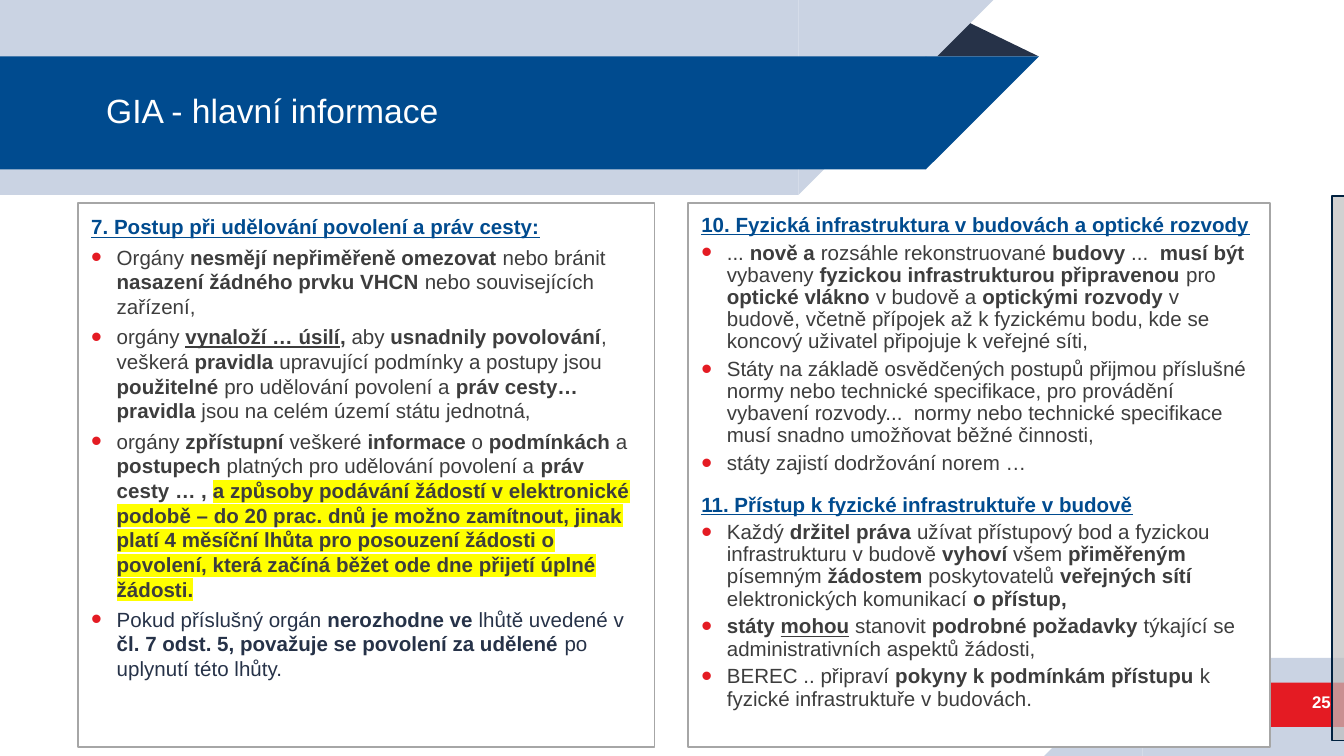
import pptx
import pptx.dml.color
import pptx.enum.shapes
import pptx.enum.text
import pptx.oxml.ns
import pptx.util
import lxml.etree

WIDE = 10
HIGH = WIDE * 9 / 16
COLS = 100
CELL = WIDE / COLS  # square grid: lengths below are columns and rows
ROWS = HIGH / CELL
FACE = "Arial"
HEX = {
    "blue": "004B8F", "pale": "CAD3E3", "navy": "263248", "red": "E41B23",
    "dark": "C00000", "white": "FFFFFF", "text": "3D3D3D", "edge": "A6A6A6",
    "mark": "FFFF00", "gray": "BFBFBF", "ink": "00213F",
}
KIND = pptx.enum.shapes.MSO_SHAPE
ALIGN = pptx.enum.text.PP_ALIGN
ANCHOR = pptx.enum.text.MSO_ANCHOR
Pt = pptx.util.Pt

# In the body text * toggles bold, _ underline and ~ highlight.
LEFT = [
    ("head", "7. Postup při udělování povolení a práv cesty:"),
    ("item", "Orgány *nesmějí nepřiměřeně omezovat *nebo bránit *nasazení žádného "
             "prvku VHCN *nebo souvisejících zařízení,"),
    ("item", "orgány *_vynaloží … úsilí_, *aby *usnadnily povolování*, veškerá "
             "*pravidla* upravující podmínky a postupy jsou *použitelné* pro "
             "udělování povolení a *práv cesty… pravidla *jsou na celém území "
             "státu jednotná,"),
    ("item", "orgány *zpřístupní* veškeré *informace* o *podmínkách* a *postupech* "
             "platných pro udělování povolení a *práv cesty … , ~a způsoby podávání "
             "žádostí v elektronické podobě – do 20 prac. dnů je možno zamítnout, "
             "jinak platí 4 měsíční lhůta pro posouzení žádosti o povolení, která "
             "začíná běžet ode dne přijetí úplné žádosti."),
    ("note", "Pokud příslušný orgán *nerozhodne ve *lhůtě uvedené v *čl. 7 odst. 5, "
             "považuje se povolení za udělené *po uplynutí této lhůty."),
]
RIGHT = [
    ("head", "10. Fyzická infrastruktura v budovách a optické rozvody"),
    ("item", "... *nově a* rozsáhle rekonstruované *budovy* ...  *musí být *vybaveny "
             "*fyzickou infrastrukturou připravenou *pro *optické vlákno *v budově a "
             "*optickými rozvody* v budově, včetně přípojek až k fyzickému bodu, kde "
             "se koncový uživatel připojuje k veřejné síti,"),
    ("item", "Státy na základě osvědčených postupů přijmou příslušné normy nebo "
             "technické specifikace, pro provádění vybavení rozvody...  normy nebo "
             "technické specifikace musí snadno umožňovat běžné činnosti,"),
    ("item", "státy zajistí dodržování norem …"),
    ("head", "11. Přístup k fyzické infrastruktuře v budově"),
    ("item", "Každý *držitel práva *užívat přístupový bod a fyzickou infrastrukturu "
             "v budově *vyhoví* všem *přiměřeným* písemným *žádostem* poskytovatelů "
             "*veřejných sítí* elektronických komunikací *o přístup,"),
    ("item", "*státy _mohou_ *stanovit *podrobné požadavky *týkající se "
             "administrativních aspektů žádosti,"),
    ("item", "BEREC .. připraví *pokyny k podmínkám přístupu *k fyzické "
             "infrastruktuře v budovách."),
]
TONE = {"head": "blue", "item": "text", "note": "navy"}


def put(item, **values):
    for name, value in values.items():
        setattr(item, name, value)


def grid(*cells):
    return [pptx.util.Inches(cell * CELL) for cell in cells]


def rgb(name):
    return pptx.dml.color.RGBColor.from_string(HEX[name])


def sub(parent, tag, **values):
    return lxml.etree.SubElement(parent, pptx.oxml.ns.qn(tag), values)


def style(font, tone, size, **values):
    put(font, name=FACE, size=Pt(size), **values)
    font.color.rgb = rgb(tone)


def shape(slide, kind, at, fill, turn=0, flip=False, edge=None, width=1):
    form = slide.shapes.add_shape(kind, *grid(*at))
    form.shadow.inherit = False
    form.rotation = turn
    if flip:
        form._element.spPr.xfrm.set("flipH", "1")
    form.fill.solid()
    form.fill.fore_color.rgb = rgb(fill)
    if edge:
        form.line.color.rgb = rgb(edge)
        form.line.width = Pt(width)
    else:
        form.line.fill.background()
    return form


def peak(slide, at, fill, turn=0):
    shape(slide, KIND.ISOSCELES_TRIANGLE, at, fill, turn).adjustments[0] = 0.32


def band(slide, high, wide, top, fill):
    """Bar from the left edge, ending in a slanted tip."""
    shape(slide, KIND.RECTANGLE, (0, top, wide, high), fill, 180, True)
    shape(slide, KIND.RIGHT_TRIANGLE, (wide, top, high, high), fill, 180, True)


def frame(slide):
    peak(slide, (68.8, 1.4, 8.5, 2.8), "navy")
    band(slide, 14.5, 59.4, 0, "pale")
    band(slide, 8.4, 68.9, 4.2, "blue")
    peak(slide, (76, 54.1, 4.3, 1.4), "dark", 180)
    foot = 7.3
    shape(slide, KIND.RECTANGLE, (85, ROWS - foot, 15, foot), "pale", flip=True)
    shape(slide, KIND.RIGHT_TRIANGLE, (85 - foot, ROWS - foot, foot, foot), "pale", flip=True)
    shape(slide, KIND.RECTANGLE, (79.3, 50.8, 20.7, 3.3), "red", flip=True)


def title(slide, text):
    head = slide.shapes.title
    slide.shapes._spTree.append(head._element)  # in front of the bands
    left, top, width, height = grid(6.9, 4.2, 68, 8.4)
    put(head, left=left, top=top, width=width, height=height)
    put(head.text_frame, text=text, word_wrap=True, vertical_anchor=ANCHOR.MIDDLE,
        auto_size=pptx.enum.text.MSO_AUTO_SIZE.NONE)
    para = head.text_frame.paragraphs[0]
    put(para, alignment=ALIGN.LEFT, line_spacing=0.9)
    style(para.font, "white", 18)


def number(slide, text):
    body = slide.shapes.add_textbox(*grid(89.5, 50.7, 10.5, 3)).text_frame
    put(body, text=text, word_wrap=True, vertical_anchor=ANCHOR.MIDDLE)
    para = body.paragraphs[0]
    para.alignment = ALIGN.RIGHT
    style(para.font, "white", 9, bold=True)


def bullet(para):
    indent = grid(1.9)[0]
    props = para._p.get_or_add_pPr()
    props.set("marL", str(indent))
    props.set("indent", str(-indent))
    sub(sub(props, "a:buClr"), "a:srgbClr", val=HEX["red"])
    sub(props, "a:buSzPct", val="150000")
    sub(props, "a:buFont", typeface=FACE)
    sub(props, "a:buChar", char="•")


def pieces(text):
    """Yield each stretch of text with the set of marks that are on."""
    marks, part = set(), ""
    for char in text:
        if char not in "*_~":
            part += char
            continue
        if part:
            yield part, marks
        marks, part = marks ^ {char}, ""
    if part:
        yield part, marks


def write(para, text, kind):
    head = kind == "head"
    for part, marks in pieces(text):
        run = para.add_run()
        run.text = part
        style(run.font, TONE[kind], 11, bold=head or "*" in marks,
              underline=head or "_" in marks)
        if "~" in marks:
            props = run._r.get_or_add_rPr()
            glow = sub(props, "a:highlight")
            sub(glow, "a:srgbClr", val=HEX["mark"])
            props.find(pptx.oxml.ns.qn("a:solidFill")).addnext(glow)


def panel(slide, left, width, lines, lead, pitch):
    """Framed text; lead and pitch are the line spacing of heads and items."""
    box = shape(slide, KIND.RECTANGLE, (left, 15.1, width, 40.5), "white",
                edge="edge", width=0.75)
    body = box.text_frame
    put(body, word_wrap=True, vertical_anchor=ANCHOR.TOP)
    for row, (kind, text) in enumerate(lines):
        para = body.add_paragraph() if row else body.paragraphs[0]
        head = kind == "head"
        put(para, alignment=ALIGN.LEFT, line_spacing=lead if head else pitch)
        if row:
            para.space_before = Pt(7.5 if head else 3)
        if not head:
            bullet(para)
        write(para, text, kind)


def veil(slide):
    form = shape(slide, KIND.RECTANGLE, (99.1, 14.6, 43.3, 40.5), "gray", edge="ink")
    tint = form._element.spPr.find(pptx.oxml.ns.qn("a:solidFill"))[0]
    sub(tint, "a:alpha", val="71000")


def main():
    deck = pptx.Presentation()
    deck.slide_width, deck.slide_height = grid(COLS, ROWS)
    slide = deck.slides.add_slide(deck.slide_layouts[5])
    frame(slide)
    title(slide, "GIA - hlavní informace")
    number(slide, "25")
    panel(slide, 5.8, 42.9, LEFT, 1.2, 1)
    panel(slide, 51.2, 43.3, RIGHT, 1.1, 0.9)
    veil(slide)
    deck.save("out.pptx")


if __name__ == "__main__":
    main()
